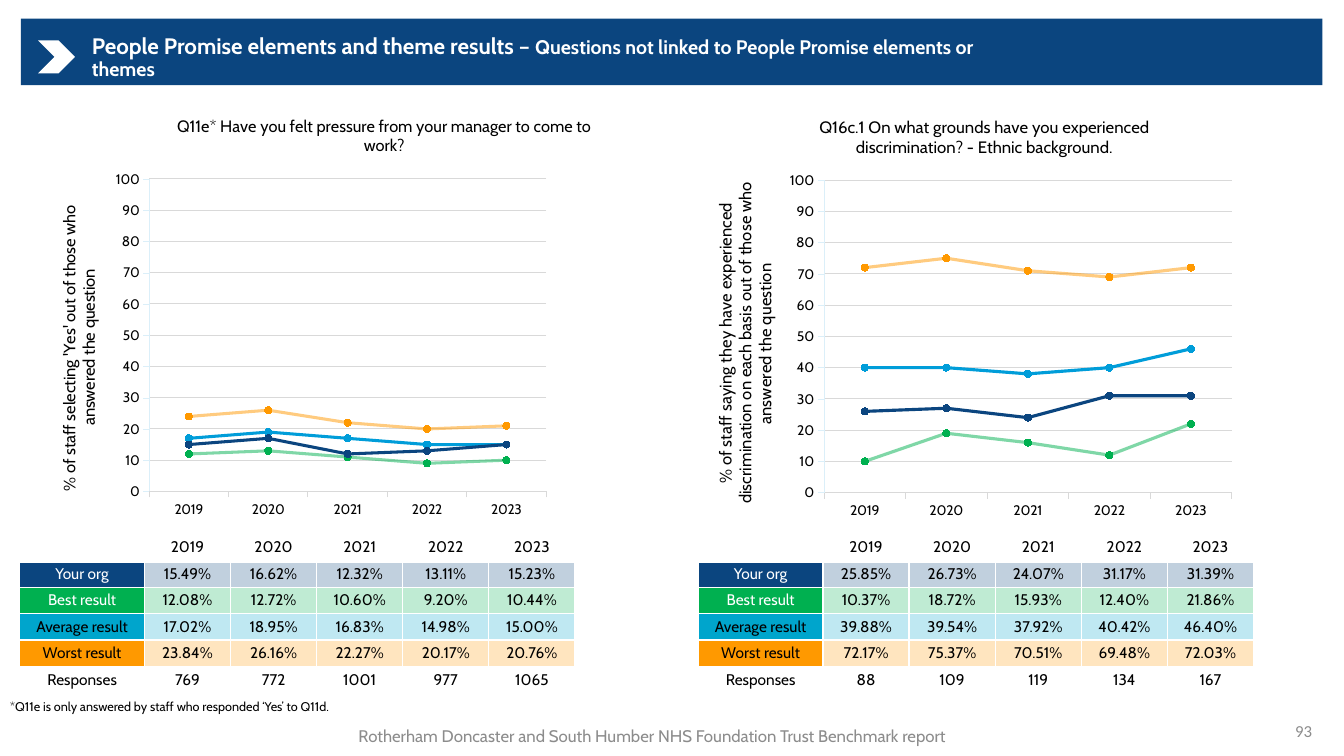
from lxml import etree
from pptx import Presentation
from pptx.chart.data import CategoryChartData
from pptx.dml.color import RGBColor
from pptx.enum.chart import XL_CHART_TYPE, XL_MARKER_STYLE, XL_TICK_MARK
from pptx.enum.shapes import MSO_SHAPE
from pptx.enum.text import MSO_ANCHOR, PP_ALIGN
from pptx.oxml import parse_xml
from pptx.oxml.ns import nsdecls, qn
from pptx.util import Cm, Pt

LINE_MARKERS = XL_CHART_TYPE.LINE_MARKERS
CIRCLE = XL_MARKER_STYLE.CIRCLE
TICK_OUT, TICK_NONE = XL_TICK_MARK.OUTSIDE, XL_TICK_MARK.NONE
RECTANGLE, CHEVRON = MSO_SHAPE.RECTANGLE, MSO_SHAPE.CHEVRON
TOP, MIDDLE = MSO_ANCHOR.TOP, MSO_ANCHOR.MIDDLE
LEFT, CENTER, RIGHT = PP_ALIGN.LEFT, PP_ALIGN.CENTER, PP_ALIGN.RIGHT

NAVY, GREEN, TEAL, SKY, ORANGE = "0B457F", "00B050", "00A5CC", "009DD9", "FF9900"
WHITE, BLACK, GREY = "FFFFFF", "000000", "8C8C8C"

# Label, label fill, label text colour
RESULT_ROWS = [("Your org", NAVY, WHITE), ("Best result", GREEN, WHITE),
               ("Average result", TEAL, BLACK), ("Worst result", ORANGE, BLACK)]
# Label, line colour, line opacity in percent
RESULT_LINES = [("Average result", SKY, 100), ("Best result", GREEN, 50),
                ("Worst result", ORANGE, 50), ("Your org", NAVY, 100)]
YEARS = ["2019", "2020", "2021", "2022", "2023"]

QUESTIONS = [
    {"title": "Q11e* Have you felt pressure from your manager to come to work?",
     "measure": "% of staff selecting 'Yes' out of those who answered the question",
     "chart_at": (0.98, 2.5), "title_at": (0.25, 0.03), "measure_at": (0.03, 0.24),
     "table_left": 0.5,
     "results": {"Your org": [15.49, 16.62, 12.32, 13.11, 15.23],
                 "Best result": [12.08, 12.72, 10.60, 9.20, 10.44],
                 "Average result": [17.02, 18.95, 16.83, 14.98, 15.00],
                 "Worst result": [23.84, 26.16, 22.27, 20.17, 20.76]},
     "responses": [769, 772, 1001, 977, 1065]},
    {"title": "Q16c.1 On what grounds have you experienced discrimination? - Ethnic background.",
     "measure": "% of staff saying they have experienced discrimination on each basis "
                "out of those who answered the question",
     "chart_at": (17.91, 2.53), "title_at": (0.19, 0.03), "measure_at": (0, 0.2),
     "table_left": 17.6,
     "results": {"Your org": [25.85, 26.73, 24.07, 31.17, 31.39],
                 "Best result": [10.37, 18.72, 15.93, 12.40, 21.86],
                 "Average result": [39.88, 39.54, 37.92, 40.42, 46.40],
                 "Worst result": [72.17, 75.37, 70.51, 69.48, 72.03]},
     "responses": [88, 109, 119, 134, 167]},
]


def rgb(hex_colour):
    return RGBColor.from_string(hex_colour)


def fade(properties, percent):
    colour = properties.find(qn("a:solidFill")).find(qn("a:srgbClr"))
    etree.SubElement(colour, qn("a:alpha")).set("val", str(percent * 1000))


def place(parent, x, y, w=None, h=None):
    """Give a chart part a manual layout, in fractions of the chart."""
    old = parent.find(qn("c:layout"))
    if old is not None:
        parent.remove(old)
    modes = '<c:xMode val="edge"/><c:yMode val="edge"/>'
    sizes = [("x", x), ("y", y)]
    if w:
        modes = '<c:layoutTarget val="inner"/>' + modes
        sizes += [("w", w), ("h", h)]
    values = "".join(f'<c:{name} val="{value}"/>' for name, value in sizes)
    layout = parse_xml(f'<c:layout {nsdecls("c")}><c:manualLayout>{modes}{values}'
                       '</c:manualLayout></c:layout>')
    parent.insert(0 if parent.find(qn("c:tx")) is None else 1, layout)


class BenchmarkSlide:
    font = "Cabin"

    def __init__(self, deck):
        self.slide = deck.slides.add_slide(deck.slide_layouts[5])
        self.shapes = self.slide.shapes

    def run(self, paragraph, text, size, colour=BLACK, bold=False, font=None):
        run = paragraph.add_run()
        run.text = text
        run.font.name, run.font.size, run.font.bold = font or self.font, Pt(size), bold
        run.font.color.rgb = rgb(colour)

    def band(self, kind, left, top, width, height, colour):
        band = self.shapes.add_shape(kind, Cm(left), Cm(top), Cm(width), Cm(height))
        band.shadow.inherit = False
        band.fill.solid()
        band.fill.fore_color.rgb = rgb(colour)
        band.line.fill.background()
        self.shapes.title._element.addprevious(band._element)

    def title(self, left, top, width, height, parts):
        title = self.shapes.title
        title.left, title.top, title.width, title.height = map(Cm, (left, top, width, height))
        frame = title.text_frame
        frame.word_wrap, frame.vertical_anchor = True, MIDDLE
        paragraph = frame.paragraphs[0]
        paragraph.alignment, paragraph.line_spacing = LEFT, 0.9
        for text, size in parts:
            self.run(paragraph, text, size, WHITE, bold=True)

    def text(self, left, top, width, height, text, size, colour, align, anchor, font=None):
        frame = self.shapes.add_textbox(Cm(left), Cm(top), Cm(width), Cm(height)).text_frame
        frame.word_wrap, frame.vertical_anchor = True, anchor
        frame.paragraphs[0].alignment = align
        self.run(frame.paragraphs[0], text, size, colour, font=font)

    def chart(self, question):
        data = CategoryChartData()
        data.categories = YEARS
        for label, _, _ in RESULT_LINES:
            data.add_series(label, [round(value) for value in question["results"][label]])
        left, top = question["chart_at"]
        chart = self.shapes.add_chart(LINE_MARKERS, Cm(left), Cm(top), Cm(14), Cm(10.55),
                                      data).chart
        chart.has_legend = False
        chart.font.name, chart.font.size = self.font, Pt(10)
        chart.font.color.rgb = rgb(BLACK)
        place(chart._chartSpace.chart.plotArea, 0.204, 0.193, 0.734, 0.756)

        # Axes
        years, percent = chart.category_axis, chart.value_axis
        percent.minimum_scale, percent.maximum_scale, percent.major_unit = 0, 100, 10
        percent.tick_labels.number_format = "0"
        percent.tick_labels.number_format_is_linked = False
        percent.has_major_gridlines = True
        for axis in (years, percent):
            axis.major_tick_mark, axis.minor_tick_mark = TICK_OUT, TICK_NONE
        for line, colour, width in ((years.format.line, "D9D9D9", 0.75),
                                    (percent.format.line, "DBEFF9", 0.25),
                                    (percent.major_gridlines.format.line, "D9D9D9", 0.75)):
            line.color.rgb, line.width = rgb(colour), Pt(width)

        # Titles
        for heading, key in ((chart.chart_title, "title"), (percent.axis_title, "measure")):
            self.run(heading.text_frame.paragraphs[0], question[key], 12)
            place(heading._element, *question[key + "_at"])
        turn = percent.axis_title.text_frame._txBody.find(qn("a:bodyPr"))
        turn.set("rot", "-5400000")
        turn.set("vert", "horz")

        # Lines
        chart.plots[0].vary_by_categories = False
        for series, (_, colour, opacity) in zip(chart.plots[0].series, RESULT_LINES):
            series.smooth = False
            line, marker = series.format.line, series.marker
            line.color.rgb, line.width = rgb(colour), Pt(2.25)
            if opacity < 100:
                fade(line._get_or_add_ln(), opacity)
            marker.style, marker.size = CIRCLE, 5
            marker.format.fill.solid()
            marker.format.fill.fore_color.rgb = rgb(colour)
            marker.format.line.color.rgb = rgb(colour)

    def cell(self, cell, text, fill=None, opacity=100, colour=BLACK, bottom=1):
        cell.margin_left = cell.margin_right = cell.margin_top = cell.margin_bottom = 0
        cell.vertical_anchor = MIDDLE
        paragraph = cell.text_frame.paragraphs[0]
        paragraph.alignment = CENTER
        self.run(paragraph, text, 11, colour)
        properties = cell._tc.get_or_add_tcPr()
        if fill:
            cell.fill.solid()
            cell.fill.fore_color.rgb = rgb(fill)
            if opacity < 100:
                fade(properties, opacity)
        else:
            cell.fill.background()
        for index, (side, width) in enumerate(zip("LRTB", (1, 1, 1, bottom))):
            properties.insert(index, parse_xml(
                f'<a:ln{side} {nsdecls("a")} w="{Pt(width)}"><a:solidFill>'
                f'<a:srgbClr val="{WHITE}"/></a:solidFill></a:ln{side}>'))

    def table(self, question):
        table = self.shapes.add_table(6, 6, Cm(question["table_left"]), Cm(13.42),
                                      Cm(13.99), Cm(3.99)).table
        table.first_row = table.horz_banding = False
        for index, column in enumerate(table.columns):
            column.width = Cm(2.17 if index else 3.14)
        for column, text in enumerate([""] + YEARS):
            self.cell(table.cell(0, column), text, bottom=3)
        for row, (label, fill, colour) in enumerate(RESULT_ROWS, 1):
            self.cell(table.cell(row, 0), label, fill, colour=colour)
            for column, value in enumerate(question["results"][label], 1):
                self.cell(table.cell(row, column), f"{value:.2f}%", fill, 25)
        for column, text in enumerate(["Responses"] + question["responses"]):
            self.cell(table.cell(5, column), str(text))


def main():
    deck = Presentation()
    deck.slide_width, deck.slide_height = Cm(33.87), Cm(19.05)
    page = BenchmarkSlide(deck)

    # Header
    page.band(RECTANGLE, 0.53, 0.47, 32.8, 1.68, NAVY)
    page.band(CHEVRON, 0.96, 1.02, 0.93, 0.83, WHITE)
    page.title(2.06, 0.9, 24.41, 1.12, [
        ("People Promise elements and theme results – ", 16),
        ("Questions not linked to People Promise elements or themes", 14)])

    # Question results
    for question in QUESTIONS:
        page.chart(question)
        page.table(question)

    # Footer
    page.text(25.7, 17.91, 7.62, 1.02, "93", 12, GREY, RIGHT, MIDDLE, "Calibri")
    page.text(7.49, 18.04, 17.91, 0.99, "Rotherham Doncaster and South Humber NHS Foundation "
              "Trust Benchmark report", 12, GREY, CENTER, MIDDLE)
    page.text(0, 17.48, 10.01, 0.64, "*Q11e is only answered by staff who responded ‘Yes’ "
              "to Q11d.", 9, BLACK, LEFT, TOP)
    deck.save("out.pptx")


if __name__ == "__main__":
    main()
